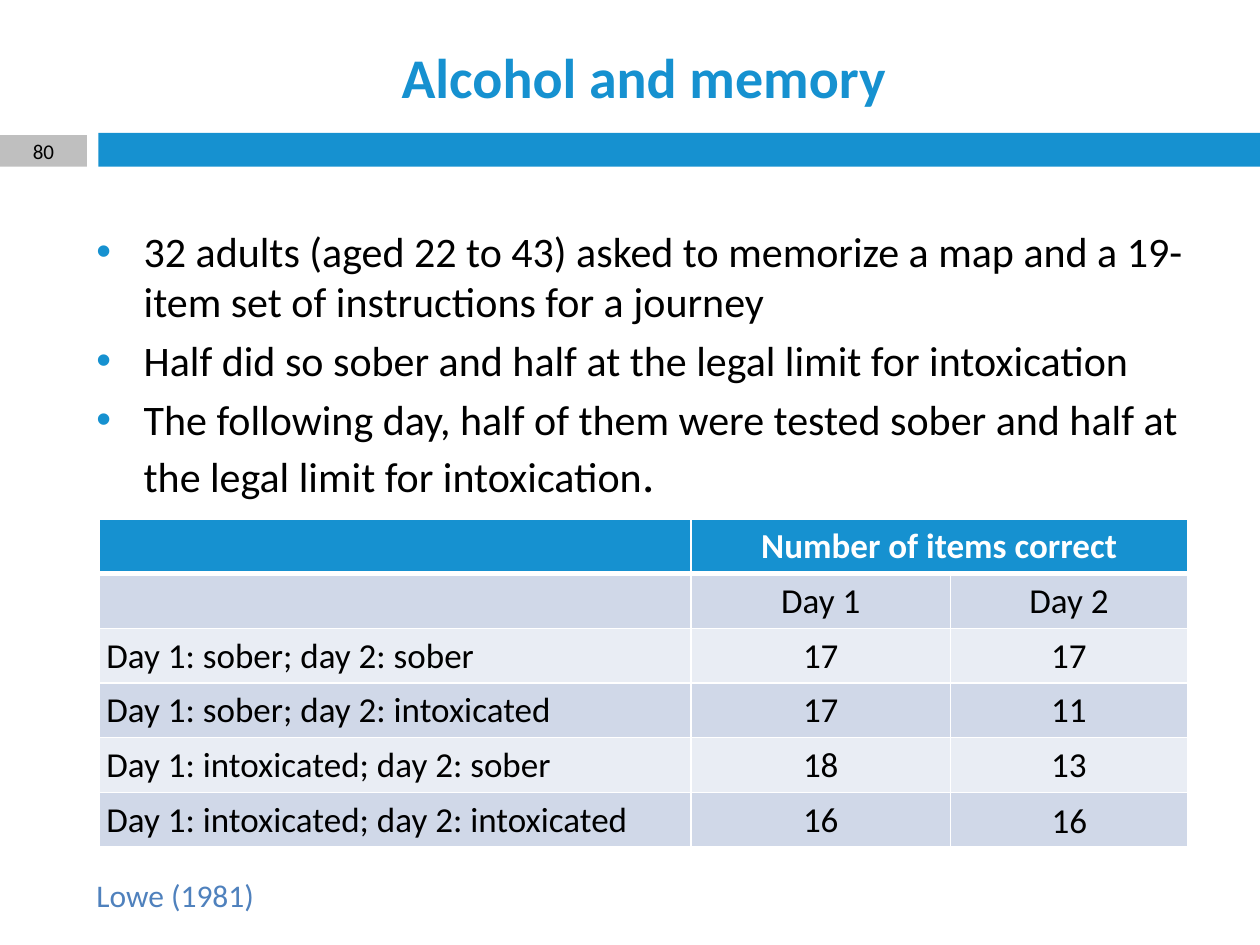
from lxml.etree import SubElement
from pptx import Presentation
from pptx.dml.color import RGBColor
from pptx.enum.shapes import MSO_SHAPE
from pptx.enum.text import MSO_ANCHOR, PP_ALIGN
from pptx.oxml.ns import qn
from pptx.util import Pt

BLUE, GRAY, WHITE, BLACK = "1691D0", "BFBFBF", "FFFFFF", "000000"
DARK_BAND, LIGHT_BAND, CITATION = "D0D8E8", "E9EDF4", "4F81BD"
FONT = "Calibri"
BULLETS = [
    "32 adults (aged 22 to 43) asked to memorize a map and a 19-item set of instructions for a journey",
    "Half did so sober and half at the legal limit for intoxication",
    "The following day, half of them were tested sober and half at the legal limit for intoxication",
]
ROWS = [
    ["", "Number of items correct", ""],
    ["", "Day 1", "Day 2"],
    ["Day 1: sober; day 2: sober", "17", "17"],
    ["Day 1: sober; day 2: intoxicated", "17", "11"],
    ["Day 1: intoxicated; day 2: sober", "18", "13"],
    ["Day 1: intoxicated; day 2: intoxicated", "16", ""],
]


def color(value):
    """Turn a hex string into a colour."""
    return RGBColor.from_string(value)


def write(para, text, size=20, ink=BLACK, bold=False, align=PP_ALIGN.LEFT):
    """Add a formatted span to a paragraph."""
    para.alignment = align
    span = para.add_run()
    span.text = text
    span.font.name = FONT
    span.font.size = Pt(size)
    span.font.bold = bold
    span.font.color.rgb = color(ink)


def add_bar(page, left, top, width, height, fill):
    """Draw a plain filled rectangle."""
    bar = page.shapes.add_shape(MSO_SHAPE.RECTANGLE, Pt(left), Pt(top), Pt(width), Pt(height))
    bar.shadow.inherit = False
    bar.fill.solid()
    bar.fill.fore_color.rgb = color(fill)
    bar.line.fill.background()
    return bar


def add_label(page, left, top, width, height, text, anchor=MSO_ANCHOR.TOP, wrap=True, **style):
    """Place a one-paragraph text box."""
    frame = page.shapes.add_textbox(Pt(left), Pt(top), Pt(width), Pt(height)).text_frame
    frame.word_wrap = wrap
    frame.vertical_anchor = anchor
    write(frame.paragraphs[0], text, **style)


def add_header(page, left, top, width, height):
    """Place the title, the blue band and the page number."""
    margin = 56.2
    add_label(page, left + margin, top, 623.5, 49, "Alcohol and memory", anchor=MSO_ANCHOR.MIDDLE,
              size=32, ink=BLUE, bold=True, align=PP_ALIGN.CENTER)
    add_bar(page, left + margin, top + height - 19.2, width - margin, 19.2, BLUE)
    number = add_bar(page, left, top + height - 18, 49.7, 18, GRAY).text_frame
    number.vertical_anchor = MSO_ANCHOR.MIDDLE
    write(number.paragraphs[0], "80", size=12, align=PP_ALIGN.CENTER)


def add_bullet(para, indent):
    """Give a paragraph a hanging blue bullet."""
    props = para._p.get_or_add_pPr()
    props.set("marL", str(Pt(indent)))
    props.set("indent", str(-Pt(indent)))
    SubElement(SubElement(props, qn("a:buClr")), qn("a:srgbClr"), val=BLUE)
    SubElement(props, qn("a:buFont"), typeface="Arial")
    SubElement(props, qn("a:buChar"), char="•")


def add_body(page, left, top, width, height):
    """Place the bulleted account of the study."""
    frame = page.shapes.add_textbox(Pt(left), Pt(top), Pt(width), Pt(height)).text_frame
    frame.word_wrap = True
    for index, text in enumerate(BULLETS):
        para = frame.add_paragraph() if index else frame.paragraphs[0]
        add_bullet(para, 27)
        para.space_before = Pt(4.8 if index else 0)
        write(para, text, size=24)
    write(para, ".", size=28)


def add_borders(cell, bottom):
    """Draw white borders round a cell."""
    props = cell._tc.get_or_add_tcPr()
    for side, weight in (("L", 1), ("R", 1), ("T", 1), ("B", bottom)):
        line = SubElement(props, qn(f"a:ln{side}"), w=str(Pt(weight)))
        SubElement(SubElement(line, qn("a:solidFill")), qn("a:srgbClr"), val=WHITE)


def add_results(page, left, top, width, height):
    """Place the table of recall scores."""
    table = page.shapes.add_table(len(ROWS), 3, Pt(left), Pt(top), Pt(width), Pt(height)).table
    for column, share in zip(table.columns, (4.7, 2.06, 1.88)):
        column.width = Pt(round(width * share / 8.64, 1))
    for r, row in enumerate(ROWS):
        table.rows[r].height = Pt(height / len(ROWS))
        fill = BLUE if r == 0 else DARK_BAND if r % 2 else LIGHT_BAND
        for c, text in enumerate(row):
            cell = table.cell(r, c)
            cell.margin_left = cell.margin_right = Pt(4.3)
            add_borders(cell, 1 if r else 3)
            cell.fill.solid()
            cell.fill.fore_color.rgb = color(fill)
            if text:
                write(cell.text_frame.paragraphs[0], text, bold=r == 0, ink=BLACK if r else WHITE,
                      align=PP_ALIGN.CENTER if c else PP_ALIGN.LEFT)
    table.cell(0, 1).merge(table.cell(0, 2))
    add_label(page, left + width - 85, top + 156.2, 35.3, 31.7, "16", wrap=False, align=PP_ALIGN.CENTER)


def main():
    """Build and save the slide."""
    deck = Presentation()
    deck.slide_width, deck.slide_height = Pt(720), Pt(540)
    page = deck.slides.add_slide(deck.slide_layouts[6])
    add_header(page, 0, 18.9, 720, 76.3)
    add_results(page, 56.5, 296.6, 622, 187.2)
    add_body(page, 48, 125.3, 655, 184)
    add_label(page, 48, 497, 108.7, 29, "Lowe (1981)", size=18, ink=CITATION)
    deck.save("out.pptx")


if __name__ == "__main__":
    main()
